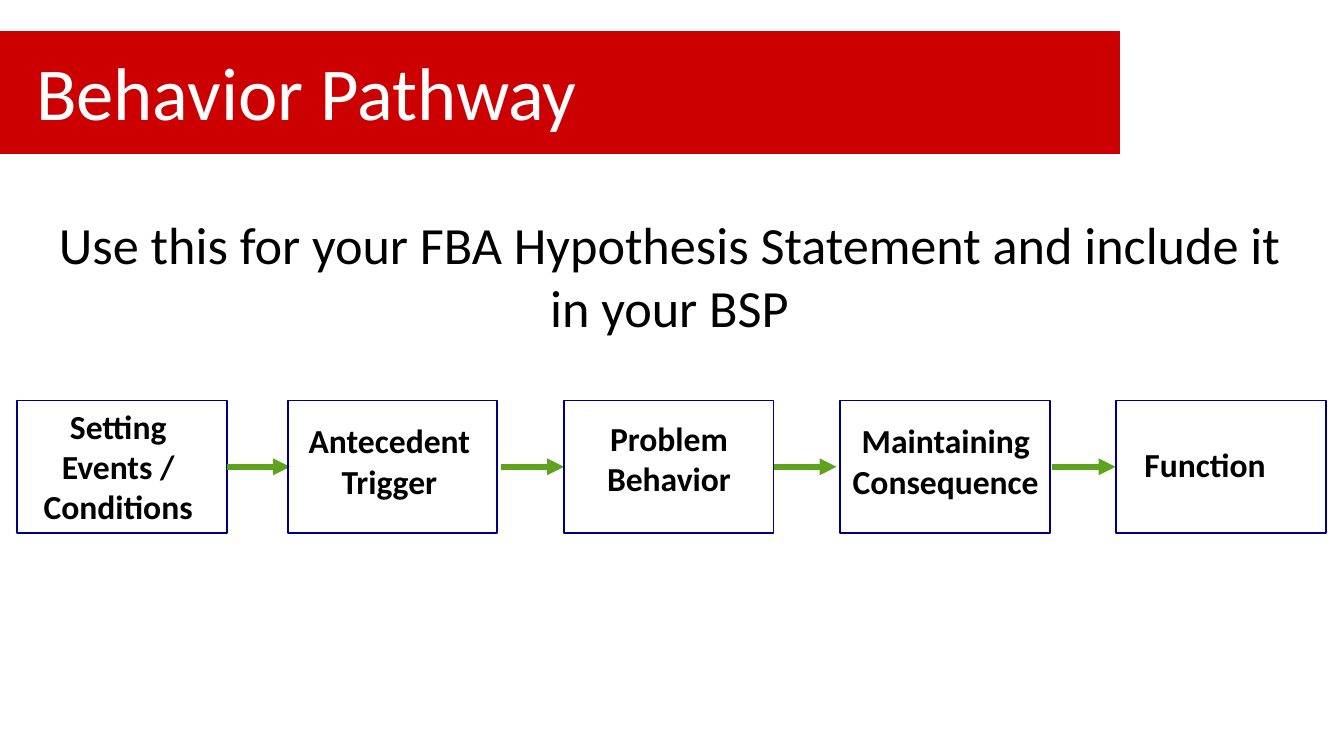
from dataclasses import dataclass

from lxml.etree import SubElement
from pptx import Presentation
from pptx.dml.color import RGBColor
from pptx.enum.shapes import MSO_CONNECTOR, MSO_SHAPE
from pptx.enum.text import MSO_ANCHOR, PP_ALIGN
from pptx.oxml.ns import qn
from pptx.util import Cm, Pt

FONT = "Calibri"
COLORS = {
    "banner": "CC0000",
    "white": "FFFFFF",
    "text": "000000",
    "border": "000080",
    "arrow": "5DA31E",
}


@dataclass
class Box:
    """A region of the slide, in centimetres."""
    left: float
    top: float
    width: float
    height: float

    def lengths(self):
        return Cm(self.left), Cm(self.top), Cm(self.width), Cm(self.height)

    def inner(self, left, top, width, height):
        return Box(self.left + left, self.top + top, width, height)


@dataclass
class Stage:
    """One step of the pathway; label is relative to the step's frame."""
    left: float
    lines: list
    label: tuple
    align: PP_ALIGN = PP_ALIGN.CENTER
    arrow_gap: float = 0


STAGES = [
    Stage(0.33, ["Setting Events /", "Conditions"], (0, -0.03, 3.81, 2.54)),
    Stage(5.44, ["Antecedent Trigger"], (-0.2, 0.25, 4.24, 1.96), arrow_gap=0.07),
    Stage(10.66, ["Problem Behavior"], (0.08, 0.2, 3.81, 1.96)),
    Stage(15.88, ["Maintaining", "Consequence"], (-0.33, 0.25, 4.65, 1.96), arrow_gap=0.05),
    Stage(21.1, ["Function"], (0.28, 0.69, 3.38, 1.12), PP_ALIGN.LEFT),
]
FRAME_WIDTH = 3.96
ARROW_LENGTH = 1.19


def color(name):
    return RGBColor.from_string(COLORS[name])


def write(frame, lines, size, color_name, align, bold=False):
    frame.word_wrap = True
    for index, line in enumerate(lines):
        para = frame.paragraphs[0] if index == 0 else frame.add_paragraph()
        para.alignment = align
        span = para.add_run()
        span.text = line
        span.font.name = FONT
        span.font.size = Pt(size)
        span.font.bold = bold
        span.font.color.rgb = color(color_name)


def add_text(page, box, *style, **options):
    write(page.shapes.add_textbox(*box.lengths()).text_frame, *style, **options)


def add_rectangle(page, box, line_name, line_width, fill_name=None):
    shape = page.shapes.add_shape(MSO_SHAPE.RECTANGLE, *box.lengths())
    shape.shadow.inherit = False
    if fill_name:
        shape.fill.solid()
        shape.fill.fore_color.rgb = color(fill_name)
    else:
        shape.fill.background()
    shape.line.color.rgb = color(line_name)
    shape.line.width = Pt(line_width)
    return shape


def add_arrow(page, left, y):
    arrow = page.shapes.add_connector(
        MSO_CONNECTOR.STRAIGHT, Cm(left), Cm(y), Cm(left + ARROW_LENGTH), Cm(y))
    arrow.line.color.rgb = color("arrow")
    arrow.line.width = Pt(3)
    SubElement(arrow.line._get_or_add_ln(), qn("a:tailEnd"), type="triangle")
    SubElement(arrow._element.spPr, qn("a:effectLst"))


def add_header(page, box):
    banner = add_rectangle(page, box, "white", 0.75, "banner")
    page.shapes._spTree.insert(2, banner._element)  # behind the title
    title = page.shapes.title
    title.left, title.top, title.width, title.height = box.inner(
        0.63, 0.1, 20.75, 2.06).lengths()
    title.text_frame.vertical_anchor = MSO_ANCHOR.MIDDLE
    write(title.text_frame, ["Behavior Pathway"], 40, "white", PP_ALIGN.LEFT)


def add_pathway(page, box):
    for index, stage in enumerate(STAGES):
        frame = box.inner(stage.left, 0, FRAME_WIDTH, box.height)
        add_rectangle(page, frame, "border", 1)
        add_text(page, frame.inner(*stage.label), stage.lines, 18, "text",
                 stage.align, bold=True)
        if index < len(STAGES) - 1:
            add_arrow(page, frame.left + frame.width + stage.arrow_gap,
                      frame.top + frame.height / 2)


def main():
    deck = Presentation()
    deck.slide_width, deck.slide_height = Cm(25.4), Cm(14.29)
    page = deck.slides.add_slide(deck.slide_layouts[5])

    # Title on its banner
    add_header(page, Box(-0.2, 0.58, 21.39, 2.34))

    # Instruction
    add_text(page, Box(0.61, 3.89, 24.08, 3),
             ["Use this for your FBA Hypothesis Statement and include it in your BSP"],
             28, "text", PP_ALIGN.CENTER)

    # Five linked steps
    add_pathway(page, Box(0, 7.57, 25.4, 2.51))
    deck.save("out.pptx")


if __name__ == "__main__":
    main()
